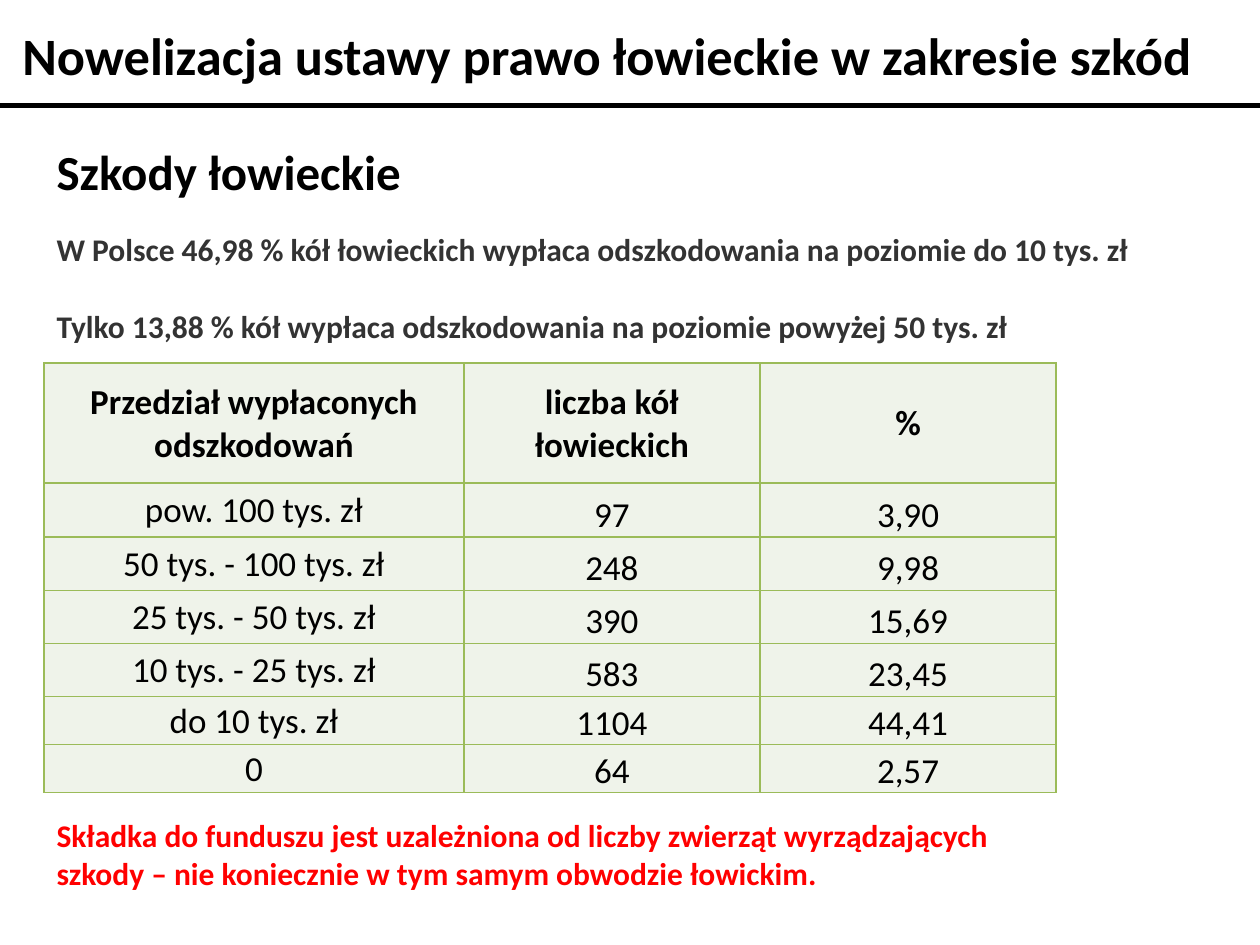
from dataclasses import dataclass

from pptx import Presentation
from pptx.dml.color import RGBColor
from pptx.enum.shapes import MSO_CONNECTOR as Connector
from pptx.enum.text import MSO_ANCHOR as Anchor, MSO_AUTO_SIZE as AutoSize, PP_ALIGN as Align
from pptx.oxml import parse_xml
from pptx.oxml.ns import nsdecls
from pptx.slide import Slide
from pptx.table import _Cell as Cell
from pptx.text.text import _Paragraph as Paragraph
from pptx.util import Cm, Pt

BLACK, GREY, RED = "000000", "333333", "FF0000"
ROW_FILL, GRID = "EFF3EA", "9BBB59"


@dataclass
class Passage:
    left: float
    top: float
    width: float
    height: float
    size: float
    color: str
    lines: list[str]
    wrap: bool = True
    gap: float = 0


PASSAGES = [
    Passage(0.2, 0.33, 25.1, 1.55, 30, BLACK,
            ["Nowelizacja ustawy prawo łowieckie w zakresie szkód"]),
    Passage(0.89, 2.72, 7.54, 1.45, 28, BLACK, ["Szkody łowieckie"], wrap=False),
    Passage(0.89, 4.52, 23.29, 3.33, 18, GREY,
            ["W Polsce 46,98 % kół łowieckich wypłaca odszkodowania na poziomie do 10 tys. zł",
             "Tylko 13,88 % kół wypłaca odszkodowania na poziomie powyżej 50 tys. zł"], gap=22),
    Passage(0.89, 16.33, 20.4, 1.8, 18, RED,
            ["Składka do funduszu jest uzależniona od liczby zwierząt wyrządzających "
             "szkody – nie koniecznie w tym samym obwodzie łowickim."]),
]

PAYOUTS = [
    ("Przedział wypłaconych odszkodowań", "liczba kół łowieckich", "%"),
    ("pow. 100 tys. zł", "97", "3,90"),
    ("50 tys. - 100 tys. zł", "248", "9,98"),
    ("25 tys. - 50 tys. zł", "390", "15,69"),
    ("10 tys. - 25 tys. zł", "583", "23,45"),
    ("do 10 tys. zł", "1104", "44,41"),
    ("0", "64", "2,57"),
]
COLUMN_WIDTHS = [8.46, 5.97, 5.97]
ROW_HEIGHTS = [2.42, 1.09, 1.07, 1.07, 1.07, 0.97, 0.97]


def rgb(value: str) -> RGBColor:
    return RGBColor.from_string(value)


def apply(target: object, values: dict) -> None:
    for name, value in values.items():
        setattr(target, name, value)


def write(paragraph: Paragraph, words: str, size: float, color: str, bold: bool) -> None:
    run = paragraph.add_run()
    run.text = words
    apply(run.font, {"name": "Calibri", "size": Pt(size), "bold": bold})
    run.font.color.rgb = rgb(color)


def draw_passage(slide: Slide, passage: Passage) -> None:
    frame = slide.shapes.add_textbox(Cm(passage.left), Cm(passage.top),
                                     Cm(passage.width), Cm(passage.height)).text_frame
    apply(frame, {"word_wrap": passage.wrap, "auto_size": AutoSize.SHAPE_TO_FIT_TEXT})
    for index, line in enumerate(passage.lines):
        paragraph = frame.add_paragraph() if index else frame.paragraphs[0]
        if index:
            paragraph.space_before = Pt(passage.gap)
        write(paragraph, line, passage.size, passage.color, True)


def draw_rule(slide: Slide) -> None:
    rule = slide.shapes.add_connector(Connector.STRAIGHT, 0, Cm(2.13), Cm(25.4), Cm(2.13))
    rule.line.width = Pt(2.75)
    rule.line.color.rgb = rgb(BLACK)
    rule._element.spPr.append(parse_xml(f"<a:effectLst {nsdecls('a')}/>"))


def add_borders(cell: Cell) -> None:
    properties = cell._tc.get_or_add_tcPr()
    for index, side in enumerate(["lnL", "lnR", "lnT", "lnB"]):
        properties.insert(index, parse_xml(
            f'<a:{side} {nsdecls("a")} w="{Pt(1)}"><a:solidFill>'
            f'<a:srgbClr val="{GRID}"/></a:solidFill></a:{side}>'))


def draw_payouts(slide: Slide) -> None:
    payouts = slide.shapes.add_table(
        len(PAYOUTS), len(COLUMN_WIDTHS), Cm(0.89), Cm(7.32),
        Cm(sum(COLUMN_WIDTHS)), Cm(sum(ROW_HEIGHTS))).table
    for column, width in zip(payouts.columns, COLUMN_WIDTHS):
        column.width = Cm(width)
    for row, height in zip(payouts.rows, ROW_HEIGHTS):
        row.height = Cm(height)
    for row_index, entries in enumerate(PAYOUTS):
        for column_index, entry in enumerate(entries):
            cell = payouts.cell(row_index, column_index)
            is_header = row_index == 0
            centred = is_header or column_index == 0
            apply(cell, {
                "margin_left": Cm(0.03), "margin_right": Cm(0.03),
                "margin_top": Cm(0.03), "margin_bottom": 0,
                "vertical_anchor": Anchor.MIDDLE if centred else Anchor.BOTTOM,
            })
            cell.fill.solid()
            cell.fill.fore_color.rgb = rgb(ROW_FILL)
            add_borders(cell)
            paragraph = cell.text_frame.paragraphs[0]
            paragraph.alignment = Align.CENTER
            write(paragraph, entry, 20, BLACK, is_header)


def main() -> None:
    deck = Presentation()
    apply(deck, {"slide_width": Cm(25.4), "slide_height": Cm(19.05)})
    slide = deck.slides.add_slide(deck.slide_layouts[6])
    draw_rule(slide)
    *upper, closing = PASSAGES
    for passage in upper:
        draw_passage(slide, passage)
    draw_payouts(slide)
    draw_passage(slide, closing)
    deck.save("out.pptx")


if __name__ == "__main__":
    main()
